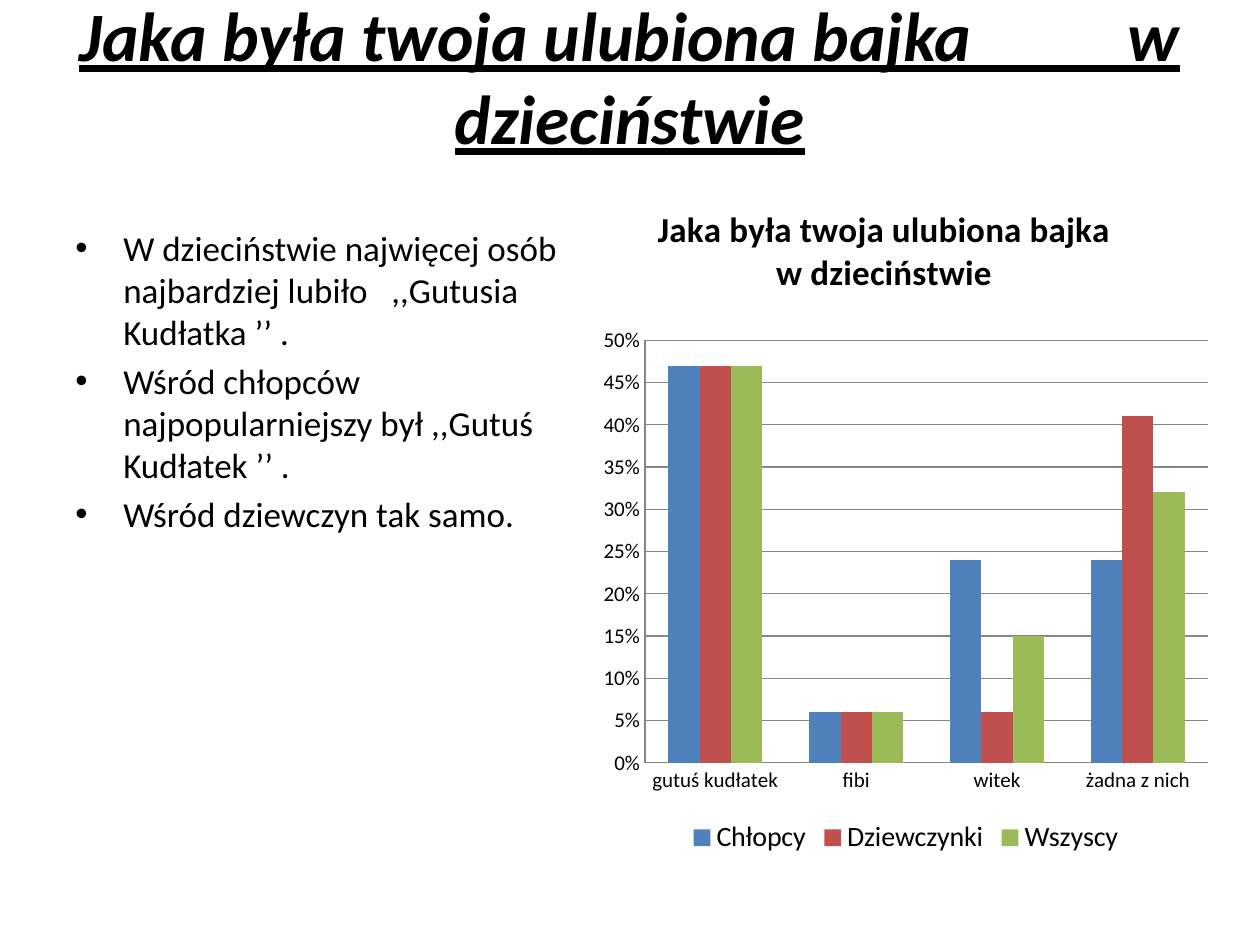
from lxml import etree
from pptx import Presentation
from pptx.chart.data import CategoryChartData
from pptx.dml.color import RGBColor
from pptx.enum.chart import XL_CHART_TYPE, XL_LEGEND_POSITION, XL_TICK_MARK
from pptx.enum.text import MSO_ANCHOR, PP_ALIGN
from pptx.oxml.ns import qn
from pptx.util import Inches, Pt

CLUSTERED = XL_CHART_TYPE.COLUMN_CLUSTERED
LEGEND_BOTTOM = XL_LEGEND_POSITION.BOTTOM
NO_TICK = XL_TICK_MARK.NONE
MIDDLE = MSO_ANCHOR.MIDDLE
CENTER = PP_ALIGN.CENTER
FONT = "Calibri"
COLORS = {
    "text": "000000",
    "background": "FFFFFF",
    "grid": "868686",
    "Chłopcy": "4F81BD",
    "Dziewczynki": "C0504D",
    "Wszyscy": "9BBB59",
}
TITLE = "Jaka była twoja ulubiona bajka          w dzieciństwie"
FINDINGS = [
    "W dzieciństwie najwięcej osób najbardziej lubiło   ,,Gutusia Kudłatka ’’ .",
    "Wśród chłopców  najpopularniejszy był ,,Gutuś Kudłatek ’’ .",
    "Wśród dziewczyn tak samo.",
]
CHART_TITLE = ["Jaka była twoja ulubiona bajka", "w dzieciństwie"]
TALES = ["gutuś kudłatek", "fibi", "witek", "żadna z nich"]
SHARES = {
    "Chłopcy": [0.47, 0.06, 0.24, 0.24],
    "Dziewczynki": [0.47, 0.06, 0.06, 0.41],
    "Wszyscy": [0.47, 0.06, 0.15, 0.32],
}


def color(name):
    """Return the named colour."""
    return RGBColor.from_string(COLORS[name])


def style_font(font, size, bold=False):
    """Set typeface, size, weight and text colour."""
    font.name = FONT
    font.size = Pt(size)
    font.bold = bold
    font.color.rgb = color("text")


def add_text_box(page, left, top, width, height):
    """Add a wrapping text box and return its text frame."""
    box = page.shapes.add_textbox(Inches(left), Inches(top), Inches(width), Inches(height))
    box.text_frame.word_wrap = True
    return box.text_frame


def add_title(page):
    """Add the underlined heading, raised by a deep bottom inset."""
    frame = add_text_box(page, 0.5, 0.3, 9, 1.25)
    frame.vertical_anchor = MIDDLE
    frame.margin_bottom = Inches(0.7)
    para = frame.paragraphs[0]
    para.text = TITLE
    para.alignment = CENTER
    style_font(para.font, 39.6, bold=True)
    para.font.italic = True
    para.font.underline = True


def add_bullet(para):
    """Give a paragraph a hanging round bullet."""
    properties = para._p.get_or_add_pPr()
    properties.set("marL", str(Inches(0.38)))
    properties.set("indent", str(-Inches(0.38)))
    etree.SubElement(properties, qn("a:buFont")).set("typeface", "Arial")
    etree.SubElement(properties, qn("a:buChar")).set("char", "•")


def add_findings(page):
    """Add the bulleted findings."""
    frame = add_text_box(page, 0.5, 1.75, 4.19, 5.39)
    for index, finding in enumerate(FINDINGS):
        para = frame.add_paragraph() if index else frame.paragraphs[0]
        para.text = finding
        para.space_before = Pt(4)
        style_font(para.font, 20)
        add_bullet(para)


def place_chart_title(title, left, top):
    """Place the chart title at fractions of the chart size."""
    element = title._element
    layout = element.find(qn("c:layout"))
    if layout is None:
        layout = etree.Element(qn("c:layout"))
        element.find(qn("c:tx")).addnext(layout)
    manual = etree.SubElement(layout, qn("c:manualLayout"))
    settings = {"xMode": "edge", "yMode": "edge", "x": left, "y": top}
    for name, value in settings.items():
        etree.SubElement(manual, qn(f"c:{name}")).set("val", str(value))


def add_chart_title(chart):
    """Write the two-line chart title."""
    frame = chart.chart_title.text_frame
    for index, line in enumerate(CHART_TITLE):
        para = frame.add_paragraph() if index else frame.paragraphs[0]
        para.text = line
        style_font(para.font, 20, bold=True)
    place_chart_title(chart.chart_title, 0.1, 0.01)


def style_axis(axis):
    """Set the labels, ticks and line of an axis."""
    axis.major_tick_mark = NO_TICK
    axis.minor_tick_mark = NO_TICK
    axis.format.line.color.rgb = color("grid")
    style_font(axis.tick_labels.font, 12)


def add_share_chart(page):
    """Add the column chart of favourite tales."""
    data = CategoryChartData(number_format="0%")
    data.categories = TALES
    for name, shares in SHARES.items():
        data.add_series(name, shares)
    chart = page.shapes.add_chart(
        CLUSTERED, Inches(4.69), Inches(1.55), Inches(5), Inches(5.28), data
    ).chart
    style_font(chart.font, 10)
    add_chart_title(chart)

    plot = chart.plots[0]
    plot.vary_by_categories = False
    plot.gap_width = 150
    for series in plot.series:
        series.format.fill.solid()
        series.format.fill.fore_color.rgb = color(series.name)

    style_axis(chart.category_axis)
    axis = chart.value_axis
    style_axis(axis)
    axis.minimum_scale = 0
    axis.maximum_scale = 0.5
    axis.major_unit = 0.05
    axis.tick_labels.number_format = "0%"
    axis.tick_labels.number_format_is_linked = False
    axis.major_gridlines.format.line.color.rgb = color("grid")

    chart.has_legend = True
    chart.legend.position = LEGEND_BOTTOM
    chart.legend.include_in_layout = False
    style_font(chart.legend.font, 16)


def main():
    """Build and save the slide."""
    deck = Presentation()
    deck.slide_width = Inches(10)
    deck.slide_height = Inches(7.5)
    page = deck.slides.add_slide(deck.slide_layouts[6])
    page.background.fill.solid()
    page.background.fill.fore_color.rgb = color("background")
    add_title(page)
    add_findings(page)
    add_share_chart(page)
    deck.save("out.pptx")


if __name__ == "__main__":
    main()
